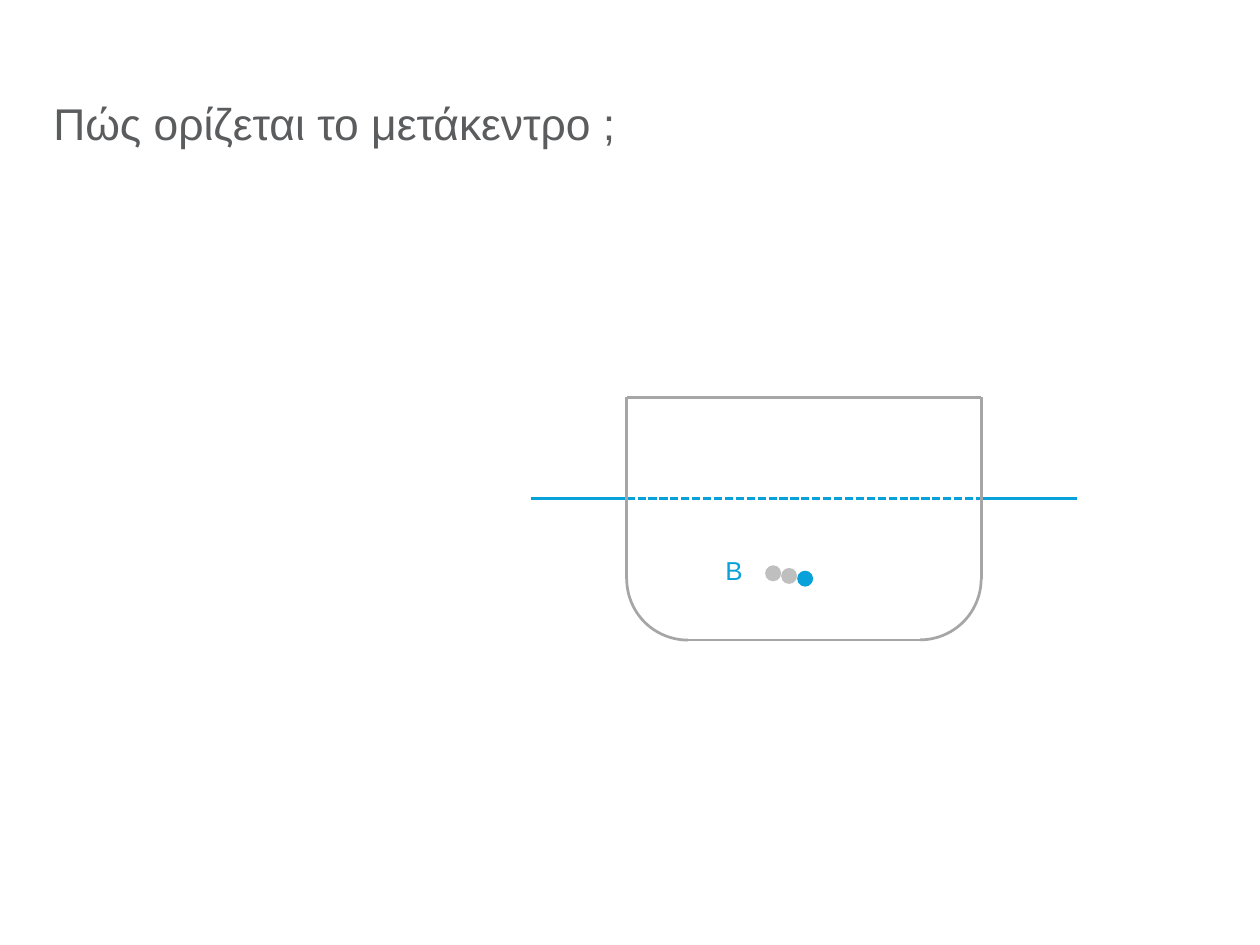
"""Builds a slide that asks how the metacentre of a floating hull is defined."""
import lxml.etree
import pptx
import pptx.dml.color
import pptx.enum.dml
import pptx.enum.shapes
import pptx.enum.text
import pptx.oxml.ns
import pptx.util

Inches = pptx.util.Inches
UNITS_PER_INCH = 576
WATER = "08A1D9"
HULL = "A6A6A6"
OLD_CENTRE = "BFBFBF"
TITLE = "5B5C5E"


def colour(hex_string):
    """Return the colour for a hex string."""
    return pptx.dml.color.RGBColor.from_string(hex_string)


def write_text(shape, text, size, hex_colour, font="Arial", spacing=1.0,
               anchor=pptx.enum.text.MSO_ANCHOR.TOP):
    """Fill a shape with one formatted, left-aligned paragraph."""
    frame = shape.text_frame
    frame.word_wrap = True
    frame.auto_size = pptx.enum.text.MSO_AUTO_SIZE.NONE
    frame.vertical_anchor = anchor
    frame.margin_left = frame.margin_right = 0
    frame.margin_top = frame.margin_bottom = 0
    paragraph = frame.paragraphs[0]
    paragraph.alignment = pptx.enum.text.PP_ALIGN.LEFT
    paragraph.line_spacing = spacing
    run = paragraph.add_run()
    run.text = text
    run.font.name = font
    run.font.size = pptx.util.Pt(size)
    run.font.color.rgb = colour(hex_colour)


def add_line(slide, start, end, hex_colour, width, dash=None):
    """Draw a straight line between two points given in inches."""
    line = slide.shapes.add_connector(
        pptx.enum.shapes.MSO_CONNECTOR.STRAIGHT,
        *(Inches(value) for value in (*start, *end)))
    line.line.color.rgb = colour(hex_colour)
    line.line.width = pptx.util.Pt(width)
    if dash is not None:
        line.line.dash_style = dash
    lxml.etree.SubElement(line._element.spPr, pptx.oxml.ns.qn("a:effectLst"))


def add_title(slide, left, top, width, height):
    """Place the question in the title placeholder."""
    title = slide.shapes.title
    title.left, title.top = Inches(left), Inches(top)
    title.width, title.height = Inches(width), Inches(height)
    write_text(title, "Πώς ορίζεται το μετάκεντρο ;", size=12, hex_colour=TITLE,
               spacing=1.25, anchor=pptx.enum.text.MSO_ANCHOR.MIDDLE)


def add_hull(slide, left, top, width, height):
    """Draw the hull section with two rounded bilges."""
    right, bottom, radius = left + width, top + height, 0.23
    edges = [
        ((left, top), (right, top)),
        ((left, top), (left, bottom - radius)),
        ((right, top), (right, bottom - radius)),
        ((left + radius, bottom), (right - radius, bottom)),
    ]
    for start, end in edges:
        add_line(slide, start, end, HULL, 0.75)
    for bilge_left, rotation in ((right - 2 * radius, 90), (left, 180)):
        bilge = slide.shapes.add_shape(
            pptx.enum.shapes.MSO_SHAPE.ARC, Inches(bilge_left),
            Inches(bottom - 2 * radius), Inches(2 * radius), Inches(2 * radius))
        bilge.rotation = rotation
        bilge.shadow.inherit = False
        bilge.fill.background()
        bilge.line.color.rgb = colour(HULL)
        bilge.line.width = pptx.util.Pt(0.75)


def add_waterline(slide, left, level, width, reach):
    """Draw the waterline, dashed inside the hull and solid on both sides."""
    right = left + width
    add_line(slide, (left, level), (right, level), WATER, 0.75,
             dash=pptx.enum.dml.MSO_LINE.SQUARE_DOT)
    for start in (left - reach, right):
        add_line(slide, (start, level), (start + reach, level), WATER, 1)


def add_buoyancy_centres(slide, left, top):
    """Draw the label B and the successive centres of buoyancy."""
    label = slide.shapes.add_textbox(
        Inches(left), Inches(top), Inches(0.18), Inches(0.18))
    write_text(label, "B", size=7, hex_colour=WATER)
    for index, fill in enumerate((OLD_CENTRE, OLD_CENTRE, WATER)):
        centre = slide.shapes.add_shape(
            pptx.enum.shapes.MSO_SHAPE.OVAL, Inches(left + 0.15 + 0.06 * index),
            Inches(top + 0.04 + 0.01 * index), Inches(0.06), Inches(0.06))
        centre.shadow.inherit = False
        centre.fill.solid()
        centre.fill.fore_color.rgb = colour(fill)
        centre.line.fill.background()


def main():
    """Build and save the presentation."""
    presentation = pptx.Presentation()
    presentation.slide_width = Inches(2722 / UNITS_PER_INCH)
    presentation.slide_height = Inches(2041 / UNITS_PER_INCH)
    slide = presentation.slides.add_slide(presentation.slide_layouts[5])
    add_title(slide, 0.2, 0.2, 4.33, 0.47)
    add_waterline(slide, 2.35, 1.87, 1.33, reach=0.36)
    add_hull(slide, 2.35, 1.49, 1.33, 0.91)
    add_buoyancy_centres(slide, 2.72, 2.08)
    presentation.save("out.pptx")


if __name__ == "__main__":
    main()
